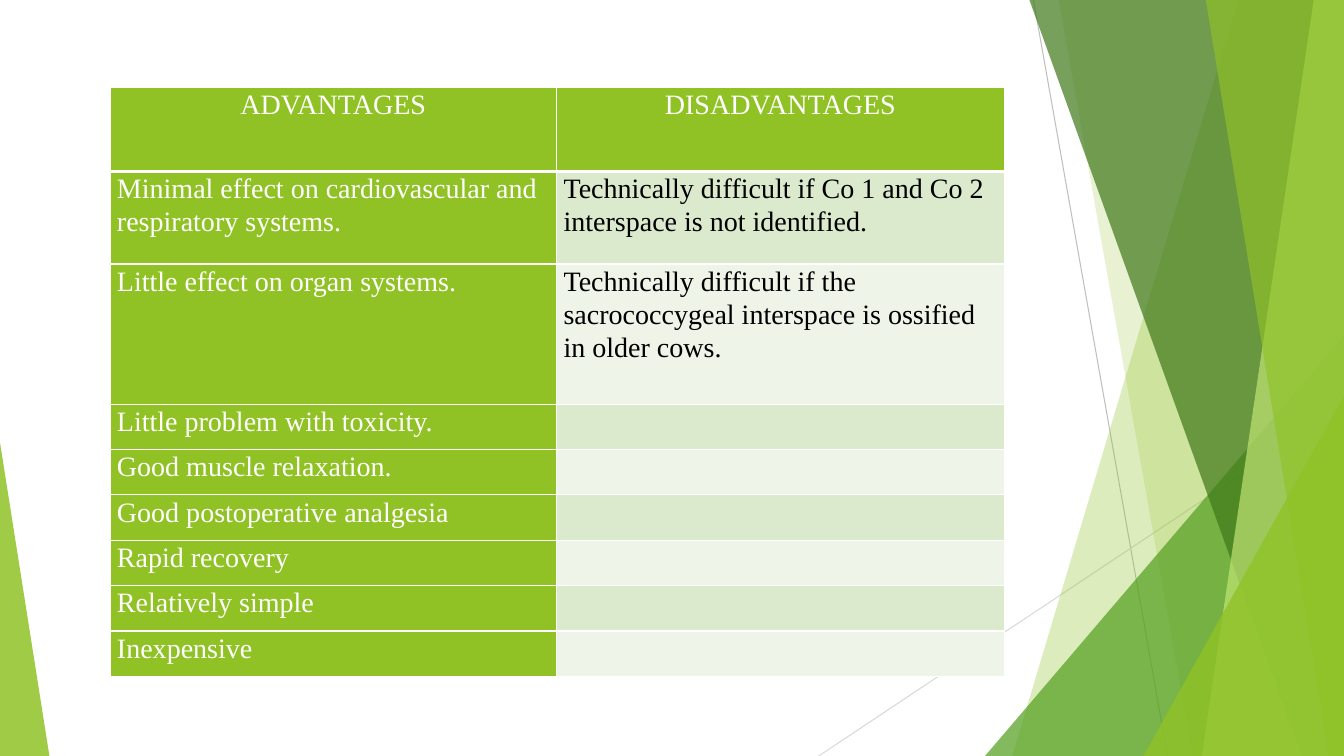
from dataclasses import dataclass

from pptx import Presentation
from pptx.dml.color import RGBColor
from pptx.enum.shapes import MSO_CONNECTOR, MSO_SHAPE
from pptx.enum.text import PP_ALIGN as Align
from pptx.oxml import parse_xml
from pptx.oxml.ns import nsdecls, qn
from pptx.oxml.xmlchemy import OxmlElement
from pptx.util import Inches, Pt


@dataclass(frozen=True)
class Theme:
    font: str = "Times New Roman"
    size: int = 20
    spacing: float = 1.07
    green: str = "90C226"
    mid_green: str = "54A021"
    dark_green: str = "3F7819"
    pale_green: str = "C0E474"
    bands: tuple[str, str] = ("DBE9CD", "EEF4E8")
    white: str = "FFFFFF"
    black: str = "000000"


@dataclass(frozen=True)
class Ray:
    """A diagonal line across the background."""
    start: tuple[float, float]
    end: tuple[float, float]
    color: str


@dataclass(frozen=True)
class Blade:
    """A full-height facet that reaches the right edge of the slide."""
    top: float
    bottom: float
    color: str
    alpha: int


@dataclass(frozen=True)
class Corner:
    """A right triangle standing on the bottom edge."""
    left: float
    top: float
    width: float
    apex: float
    color: str
    alpha: int


THEME = Theme()
WIDTH, HEIGHT = 13.33, 7.5

RAYS = [
    Ray((10.25, 0), (11.58, HEIGHT), "BFBFBF"),
    Ray((WIDTH, 4.03), (8.12, HEIGHT), "D9D9D9"),
]
FACETS = [
    Blade(12.28, 10.04, THEME.green, 30),
    Blade(10.5, 11.83, THEME.green, 20),
    Corner(9.77, 3.33, 3.56, 1, THEME.mid_green, 72),
    Blade(10.21, 12.91, THEME.dark_green, 70),
    Blade(13.03, 11.92, THEME.pale_green, 70),
    Blade(11.96, 13.18, THEME.green, 65),
    Corner(11.34, 3.93, 1.99, 1, THEME.green, 80),
    Corner(0, 4.39, 0.49, 0, THEME.green, 85),
]

COLUMN_WIDTHS = [4.43, 4.44]
ROW_HEIGHTS = [0.83, 0.92, 1.39] + [0.45] * 6
ROWS = [
    ("ADVANTAGES", "DISADVANTAGES"),
    ("Minimal effect on cardiovascular and respiratory systems.",
     "Technically difficult if Co 1 and Co 2 interspace is not identified."),
    ("Little effect on organ systems.",
     "Technically difficult if the sacrococcygeal interspace is ossified in older cows."),
    ("Little problem with toxicity.", ""),
    ("Good muscle relaxation.", ""),
    ("Good postoperative analgesia", ""),
    ("Rapid recovery", ""),
    ("Relatively simple", ""),
    ("Inexpensive", ""),
]
CELL_FORMAT = {
    "margin_left": Inches(0.07),
    "margin_right": Inches(0.07),
    "margin_top": 0,
    "margin_bottom": 0,
}
FONT_FORMAT = {"name": THEME.font, "size": Pt(THEME.size), "bold": False}


def rgb(color: str) -> RGBColor:
    return RGBColor.from_string(color)


def apply(target, values: dict) -> None:
    for name, value in values.items():
        setattr(target, name, value)


def draw_ray(s, ray: Ray) -> None:
    points = [Inches(v) for v in ray.start + ray.end]
    line = s.shapes.add_connector(MSO_CONNECTOR.STRAIGHT, *points)
    line.line.color.rgb = rgb(ray.color)
    line.line.width = Pt(0.75)
    line.element.spPr.append(OxmlElement("a:effectLst"))


def draw_facet(s, facet: Blade | Corner) -> None:
    if isinstance(facet, Blade):
        builder = s.shapes.build_freeform(Inches(facet.top), 0)
        corners = [(WIDTH, 0), (WIDTH, HEIGHT), (facet.bottom, HEIGHT)]
        builder.add_line_segments([(Inches(x), Inches(y)) for x, y in corners])
        sp = builder.convert_to_shape()
    else:
        box = (facet.left, facet.top, facet.width, HEIGHT - facet.top)
        sp = s.shapes.add_shape(MSO_SHAPE.ISOSCELES_TRIANGLE, *map(Inches, box))
        sp.adjustments[0] = facet.apex
    sp.shadow.inherit = False
    sp.line.fill.background()
    sp.fill.solid()
    sp.fill.fore_color.rgb = rgb(facet.color)
    alpha = OxmlElement("a:alpha")
    alpha.set("val", str(facet.alpha * 1000))
    sp.element.spPr.find(".//" + qn("a:srgbClr")).append(alpha)


def set_borders(cell, bottom: int) -> None:
    tc_pr = cell.fill._xPr
    widths = {"lnL": 1, "lnR": 1, "lnT": 1, "lnB": bottom}
    for i, (side, width) in enumerate(widths.items()):
        tc_pr.insert(i, parse_xml(
            f'<a:{side} {nsdecls("a")} w="{Pt(width)}"><a:solidFill>'
            f'<a:srgbClr val="{THEME.white}"/></a:solidFill></a:{side}>'))


def fill_cell(cell, text: str, row: int, col: int) -> None:
    header = row == 0
    accent = header or col == 0
    apply(cell, CELL_FORMAT)
    cell.fill.solid()
    cell.fill.fore_color.rgb = rgb(THEME.green if accent else THEME.bands[(row - 1) % 2])
    set_borders(cell, bottom=3 if header else 1)
    if not text:
        return
    p = cell.text_frame.paragraphs[0]
    p.alignment = Align.CENTER if header else Align.LEFT
    p.line_spacing = THEME.spacing
    r = p.add_run()
    r.text = text
    apply(r.font, FONT_FORMAT)
    r.font.color.rgb = rgb(THEME.white if accent else THEME.black)


def draw_table(s) -> None:
    box = (1.09, 0.87, sum(COLUMN_WIDTHS), sum(ROW_HEIGHTS))
    table = s.shapes.add_table(len(ROWS), len(COLUMN_WIDTHS), *map(Inches, box)).table
    for column, width in zip(table.columns, COLUMN_WIDTHS):
        column.width = Inches(width)
    for i, (height, texts) in enumerate(zip(ROW_HEIGHTS, ROWS)):
        table.rows[i].height = Inches(height)
        for j, text in enumerate(texts):
            fill_cell(table.cell(i, j), text, i, j)


def main() -> None:
    prs = Presentation()
    prs.slide_width, prs.slide_height = Inches(WIDTH), Inches(HEIGHT)
    s = prs.slides.add_slide(prs.slide_layouts[6])

    # Background facets
    for ray in RAYS:
        draw_ray(s, ray)
    for facet in FACETS:
        draw_facet(s, facet)

    # Comparison table
    draw_table(s)
    prs.save("out.pptx")


if __name__ == "__main__":
    main()
